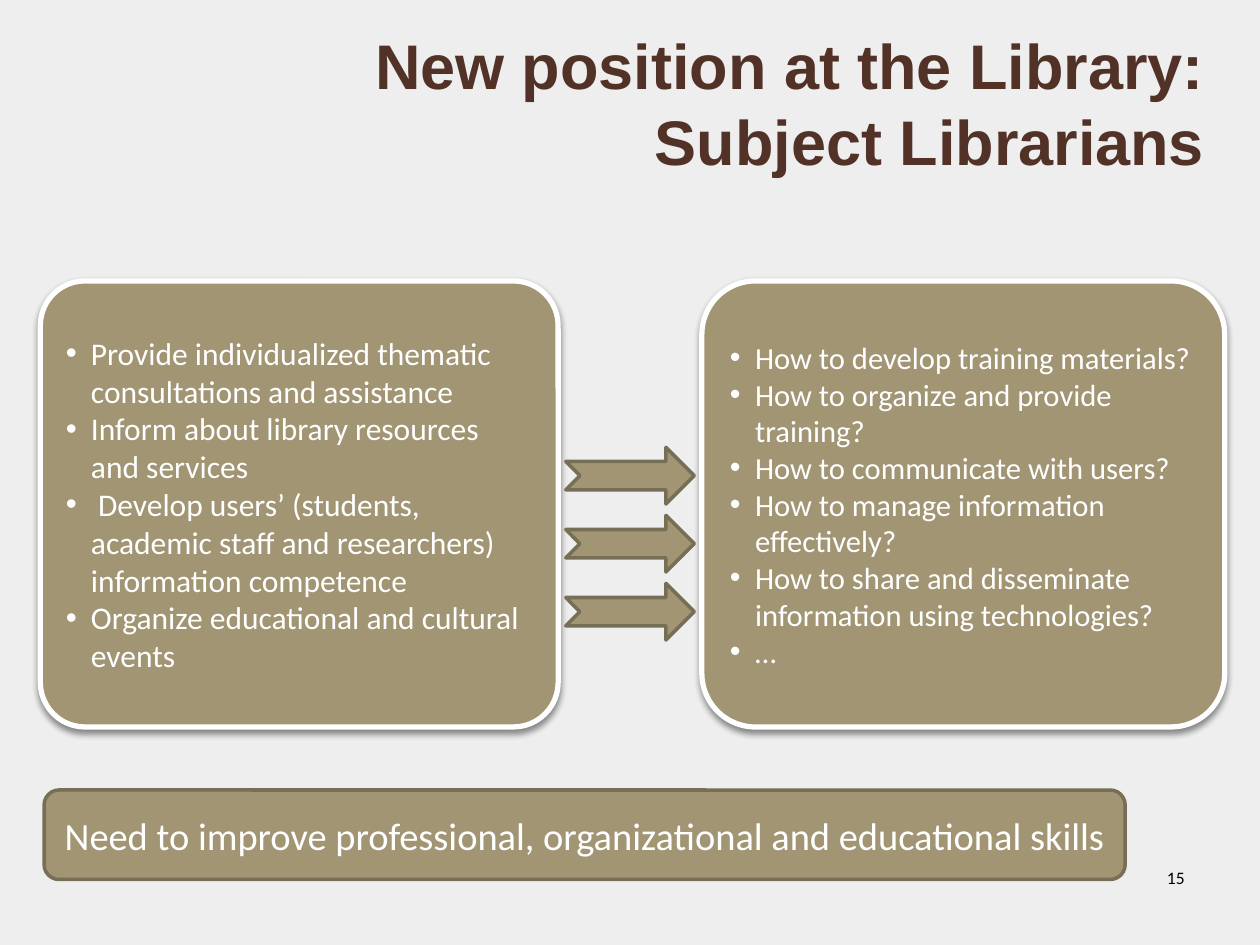
from lxml.etree import SubElement
from pptx import Presentation
from pptx.dml.color import RGBColor
from pptx.enum.shapes import MSO_SHAPE
from pptx.enum.text import MSO_ANCHOR, MSO_AUTO_SIZE, PP_ALIGN
from pptx.oxml.ns import qn
from pptx.util import Inches, Pt

PAPER = RGBColor(0xEE, 0xEE, 0xEE)
BROWN = RGBColor(0x52, 0x32, 0x27)
SAND = RGBColor(0xA1, 0x95, 0x74)
EDGE = RGBColor(0x77, 0x6E, 0x56)
WHITE = RGBColor(0xFF, 0xFF, 0xFF)
BLACK = RGBColor(0, 0, 0)

CARD_TOP, CARD_HIGH = 2.23, 3.54
ARROW_TOP, ARROW_STEP, ARROW_COUNT = 3.55, 0.54, 3

TASKS = [
    "Provide individualized thematic consultations and assistance",
    "Inform about library resources and services",
    " Develop users’ (students, academic staff and researchers) information competence",
    "Organize educational and cultural events",
]
NEEDS = [
    "How to develop training materials?",
    "How to organize and provide training?",
    "How to communicate with users?",
    "How to manage information effectively?",
    "How to share and disseminate information using technologies?",
    "…",
]


def style(para, size, color, align, face="Calibri", bold=False):
    para.alignment = align
    font = para.font
    font.name, font.size, font.bold = face, Pt(size), bold
    font.color.rgb = color


def add_title(slide, text):
    title = slide.shapes.title
    title.left, title.top = Inches(1.54), Inches(0.52)
    title.width, title.height = Inches(8.12), Inches(0.94)
    frame = title.text_frame
    frame.text = text
    frame.word_wrap = True
    frame.auto_size = MSO_AUTO_SIZE.NONE
    frame.vertical_anchor = MSO_ANCHOR.BOTTOM
    style(frame.paragraphs[0], 36, BROWN, PP_ALIGN.RIGHT, "Arial", True)


def add_number(slide, text):
    box = slide.shapes.add_textbox(Inches(7.17), Inches(6.83), Inches(2.33), Inches(0.52))
    frame = box.text_frame
    frame.word_wrap = True
    frame.text = text
    style(frame.paragraphs[0], 10, BLACK, PP_ALIGN.RIGHT)


def add_block(slide, kind, place, edge=EDGE, width=2):
    """Add a flat sand-coloured shape; place is left, top, width, height."""
    shape = slide.shapes.add_shape(kind, *map(Inches, place))
    shape.shadow.inherit = False
    shape.fill.solid()
    shape.fill.fore_color.rgb = SAND
    shape.line.color.rgb = edge
    shape.line.width = Pt(width)
    shape.text_frame.word_wrap = True
    shape.text_frame.vertical_anchor = MSO_ANCHOR.MIDDLE
    return shape


def add_shadow(shape):
    effects = shape._element.spPr.find(qn("a:effectLst"))
    shadow = SubElement(effects, qn("a:outerShdw"), blurRad=str(Pt(4)),
                        dist=str(Pt(2)), dir="5400000", rotWithShape="0")
    color = SubElement(shadow, qn("a:srgbClr"), val=str(BLACK))
    SubElement(color, qn("a:alpha"), val="43000")


def add_bullet(para):
    props = para._p.get_or_add_pPr()
    props.set("marL", str(Inches(0.2)))
    props.set("indent", str(-Inches(0.2)))
    SubElement(props, qn("a:buFont"), typeface="Arial")
    SubElement(props, qn("a:buChar"), char="•")


def add_card(slide, left, width, curve, items, size):
    place = left, CARD_TOP, width, CARD_HIGH
    card = add_block(slide, MSO_SHAPE.ROUNDED_RECTANGLE, place, WHITE, 3)
    card.adjustments[0] = curve
    add_shadow(card)
    frame = card.text_frame
    frame.text = "\n".join(items)
    for para in frame.paragraphs:
        add_bullet(para)
        style(para, size, WHITE, PP_ALIGN.LEFT)


def add_arrows(slide):
    for row in range(ARROW_COUNT):
        place = 4.49, ARROW_TOP + row * ARROW_STEP, 1.02, 0.45
        add_block(slide, MSO_SHAPE.NOTCHED_RIGHT_ARROW, place)


def add_banner(slide, text):
    banner = add_block(slide, MSO_SHAPE.ROUNDED_RECTANGLE, (0.35, 6.27, 8.58, 0.71))
    banner.text_frame.text = text
    style(banner.text_frame.paragraphs[0], 22, WHITE, PP_ALIGN.CENTER)


def main():
    deck = Presentation()
    deck.slide_width, deck.slide_height = Inches(10), Inches(7.5)
    slide = deck.slides.add_slide(deck.slide_layouts.get_by_name("Title Only"))
    slide.background.fill.solid()
    slide.background.fill.fore_color.rgb = PAPER
    add_title(slide, "New position at the Library: Subject Librarians")
    add_number(slide, "15")
    add_card(slide, 0.32, 4.11, 0.1, TASKS, 18)
    add_card(slide, 5.57, 4.15, 0.12, NEEDS, 17.5)
    add_arrows(slide)
    add_banner(slide, "Need to improve professional, organizational and educational skills")
    deck.save("out.pptx")


if __name__ == "__main__":
    main()
